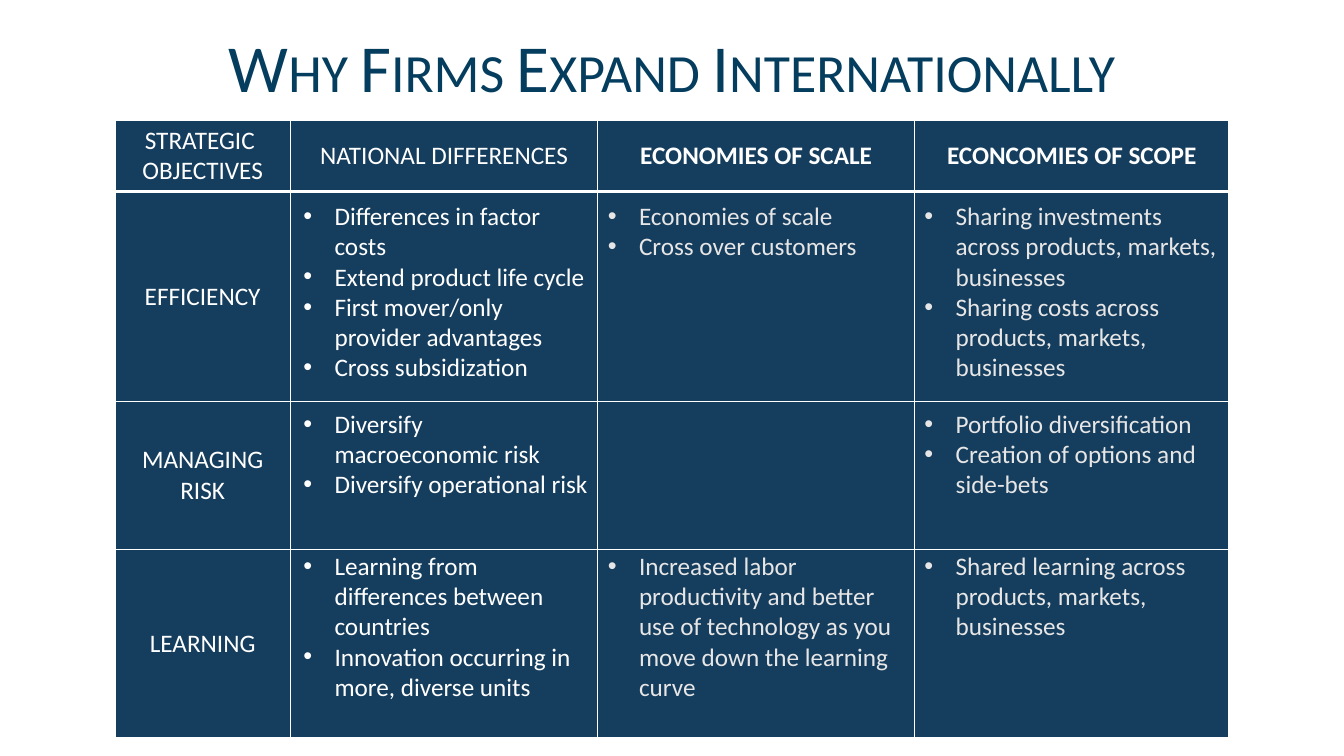
from dataclasses import dataclass
from itertools import accumulate

from lxml import etree
from pptx import Presentation
from pptx.dml.color import RGBColor
from pptx.enum.text import MSO_ANCHOR, MSO_AUTO_SIZE, PP_ALIGN
from pptx.oxml.ns import qn
from pptx.util import Inches, Pt

CENTER, LEFT = PP_ALIGN.CENTER, PP_ALIGN.LEFT
MIDDLE = MSO_ANCHOR.MIDDLE
GROW = MSO_AUTO_SIZE.SHAPE_TO_FIT_TEXT

COLORS = {"navy": "153D5D", "title": "053D5E", "white": "FFFFFF", "pale": "E7E6E6"}
FONT = "Calibri"
WIDE, HIGH = 13.33, 7.5

# Grid of the table, in inches
COLS = [1.74, 3.05, 3.14, 3.12]
ROWS = [0.7, 2.08, 1.47, 1.87]
EDGES = list(accumulate(COLS, initial=1.14))
TOPS = list(accumulate(ROWS, initial=1.19))
HANG = 0.31


@dataclass
class Note:
    col: int
    row: int
    high: float
    items: list[str]


HEADS = ["STRATEGIC \nOBJECTIVES", "NATIONAL DIFFERENCES",
         "ECONOMIES OF SCALE", "ECONCOMIES OF SCOPE"]
GOALS = ["EFFICIENCY", "MANAGING RISK", "LEARNING"]
NOTES = [
    Note(1, 1, 2.22, ["Differences in factor costs", "Extend product life cycle",
                      "First mover/only provider advantages", "Cross subsidization"]),
    Note(1, 2, 1.31, ["Diversify macroeconomic risk", "Diversify operational risk"]),
    Note(1, 3, 1.92, ["Learning from differences between countries",
                      "Innovation occurring in more, diverse units"]),
    Note(2, 1, 1.31, ["Economies of scale", "Cross over customers"]),
    Note(2, 3, 1.92, ["Increased labor productivity and better use of technology "
                      "as you move down the learning curve"]),
    Note(3, 1, 2.22, ["Sharing investments across products, markets, businesses",
                      "Sharing costs across products, markets, businesses"]),
    Note(3, 2, 1.31, ["Portfolio diversification", "Creation of options and side-bets"]),
    Note(3, 3, 1.31, ["Shared learning across products, markets, businesses"]),
]
# Small offset of the notes from the top and left of their cells
DROP = {1: 0.05, 2: 0.03, 3: -0.03}
SHIFT = {1: 0.03, 2: 0, 3: 0}


def write(frame, text: str, *, size: float = 18, color: str = "white",
          bold: bool = False, align=CENTER, small: bool = False,
          bullet: bool = False) -> None:
    for i, line in enumerate(text.split("\n")):
        para = frame.paragraphs[0] if i == 0 else frame.add_paragraph()
        para.alignment = align
        run = para.add_run()
        run.text = line
        font = run.font
        font.name, font.size, font.bold = FONT, Pt(size), bold
        font.color.rgb = RGBColor.from_string(COLORS[color])
        if small:
            font._element.set("cap", "small")
        if bullet:
            props = para._p.get_or_add_pPr()
            props.set("marL", str(Inches(HANG)))
            props.set("indent", str(-Inches(HANG)))
            etree.SubElement(props, qn("a:buFont")).set("typeface", "Arial")
            etree.SubElement(props, qn("a:buChar")).set("char", "•")


def add_box(slide, left: float, top: float, wide: float, high: float):
    box = slide.shapes.add_textbox(*map(Inches, (left, top, wide, high)))
    frame = box.text_frame
    frame.word_wrap = True
    frame.auto_size = GROW
    return frame


def rule(cell, sides: dict[str, float]) -> None:
    props = cell._tc.get_or_add_tcPr()
    for i, (side, width) in enumerate(sides.items()):
        line = etree.Element(qn(f"a:ln{side}"), w=str(Pt(width)))
        fill = etree.SubElement(line, qn("a:solidFill"))
        etree.SubElement(fill, qn("a:srgbClr")).set("val", COLORS["white"])
        props.insert(i, line)


def add_grid(slide) -> None:
    area = (EDGES[0], TOPS[0], sum(COLS), sum(ROWS))
    table = slide.shapes.add_table(len(ROWS), len(COLS), *map(Inches, area)).table
    table.horz_banding = False
    for col, wide in zip(table.columns, COLS):
        col.width = Inches(wide)
    for row, high in zip(table.rows, ROWS):
        row.height = Inches(high)
    for r in range(len(ROWS)):
        for c in range(len(COLS)):
            cell = table.cell(r, c)
            cell.fill.solid()
            cell.fill.fore_color.rgb = RGBColor.from_string(COLORS["navy"])
            cell.vertical_anchor = MIDDLE
            rule(cell, {"L": 1, "R": 1, "T": 3 if r == 1 else 1, "B": 3 if r == 0 else 1})
            if r == 0:
                write(cell.text_frame, HEADS[c], bold=c > 1)
            elif c == 0:
                write(cell.text_frame, GOALS[r - 1])


def add_note(slide, note: Note) -> None:
    shift = SHIFT[note.col]
    frame = add_box(slide, EDGES[note.col] + shift, TOPS[note.row] + DROP[note.row],
                    COLS[note.col] - shift, note.high)
    write(frame, "\n".join(note.items), align=LEFT, bullet=True,
          color="white" if note.col == 1 else "pale")


def main() -> None:
    deck = Presentation()
    deck.slide_width, deck.slide_height = Inches(WIDE), Inches(HIGH)
    slide = deck.slides.add_slide(deck.slide_layouts[6])

    # Table with the bullet notes on top
    add_grid(slide)
    for note in NOTES:
        add_note(slide, note)

    # Title
    title = add_box(slide, 0, 0.2, WIDE, 0.91)
    write(title, "Why Firms Expand Internationally", size=48, color="title", small=True)

    deck.save("out.pptx")


if __name__ == "__main__":
    main()
